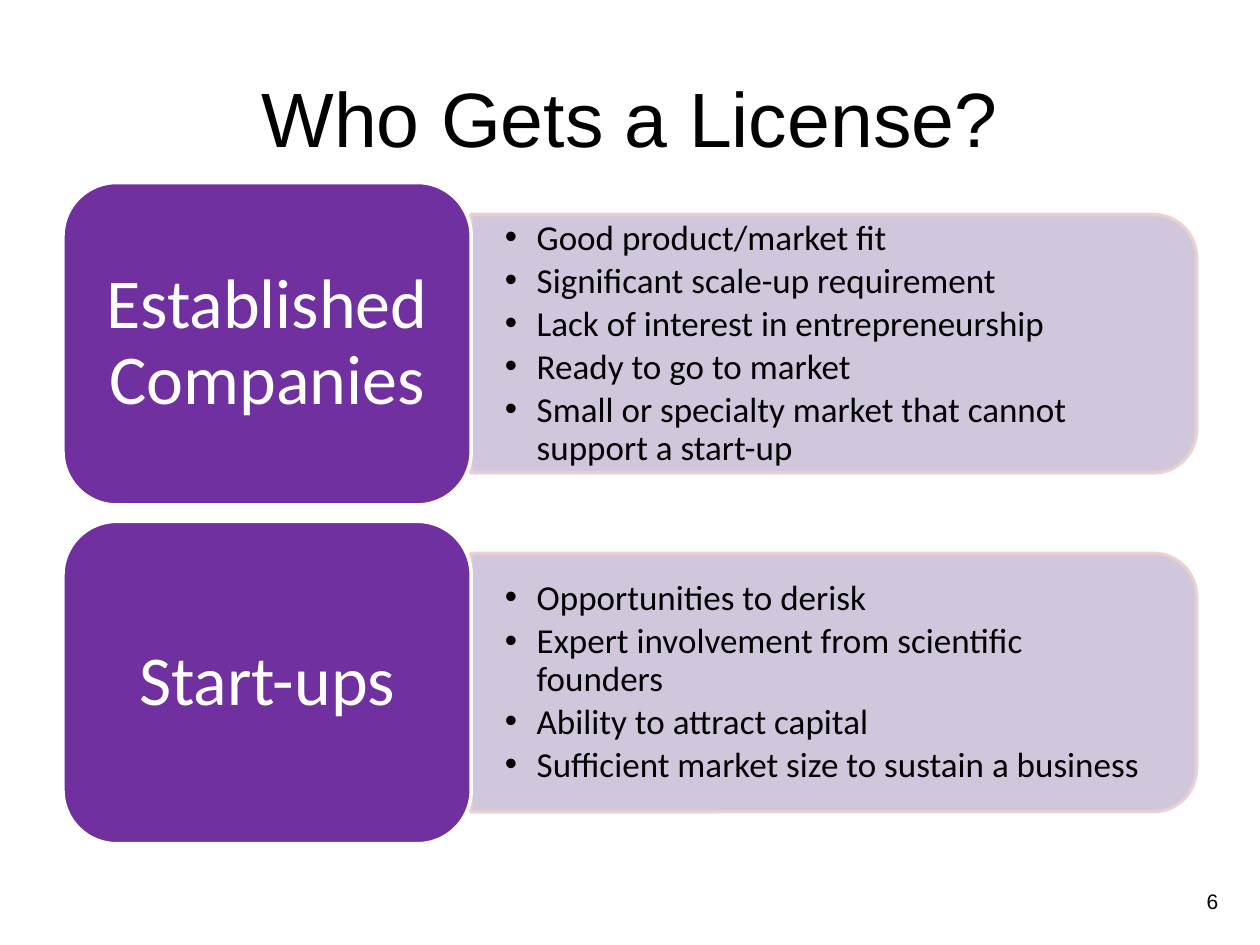
from lxml import etree
from pptx import Presentation
from pptx.dml.color import RGBColor
from pptx.enum.shapes import MSO_SHAPE
from pptx.enum.text import MSO_ANCHOR, PP_ALIGN
from pptx.oxml.ns import qn
from pptx.util import Cm, Pt

ROUNDED = MSO_SHAPE.ROUNDED_RECTANGLE
ROUNDED_TOP = MSO_SHAPE.ROUND_2_SAME_RECTANGLE
MIDDLE = MSO_ANCHOR.MIDDLE
LEFT, CENTER, RIGHT = PP_ALIGN.LEFT, PP_ALIGN.CENTER, PP_ALIGN.RIGHT

TAG_LEFT, TAG_WIDTH, TAG_HEIGHT = 1.27, 8.23, 6.5
FIRST_TOP, ROW_PITCH = 3.68, 6.83
PANEL_LEFT, PANEL_WIDTH, PANEL_HEIGHT = 9.49, 14.63, 5.21
LIST_WIDTH, LIST_HEIGHT = 14.38, 4.7

GROUPS = [
    ("Established Companies", [
        "Good product/market fit",
        "Significant scale-up requirement",
        "Lack of interest in entrepreneurship",
        "Ready to go to market",
        "Small or specialty market that cannot support a start-up",
    ]),
    ("Start-ups", [
        "Opportunities to derisk",
        "Expert involvement from scientific founders",
        "Ability to attract capital",
        "Sufficient market size to sustain a business",
    ]),
]


def rgb(color):
    return RGBColor.from_string(color)


def add_bullet(para):
    properties = para._p.get_or_add_pPr()
    properties.set("marL", str(Cm(0.64)))
    properties.set("indent", str(-Cm(0.64)))
    etree.SubElement(properties, qn("a:buFont")).set("typeface", "Arial")
    etree.SubElement(properties, qn("a:buChar")).set("char", "•")


def write_text(box, text, size=20, font="Calibri", color="000000", align=LEFT,
               spacing=1.0, after=0, bullets=False, insets=(0.25, 0.13)):
    frame = box.text_frame
    frame.word_wrap = True
    frame.vertical_anchor = MIDDLE
    frame.margin_left = frame.margin_right = Cm(insets[0])
    frame.margin_top = frame.margin_bottom = Cm(insets[1])
    frame.text = text
    for para in frame.paragraphs:
        if bullets:
            para.level = 1
            add_bullet(para)
        para.alignment = align
        para.line_spacing = spacing
        para.space_before = Pt(0)
        para.space_after = Pt(after)
        for span in para.runs:
            span.font.name = font
            span.font.size = Pt(size)
            span.font.color.rgb = rgb(color)


def add_box(slide, kind, left, top, width, height, fill, line, opacity=100):
    box = slide.shapes.add_shape(kind, Cm(left), Cm(top), Cm(width), Cm(height))
    box.shadow.inherit = False
    box.fill.solid()
    box.fill.fore_color.rgb = rgb(fill)
    box.line.color.rgb = rgb(line)
    box.line.width = Pt(2)
    if opacity < 100:
        for color in box._element.spPr.iter(qn("a:srgbClr")):
            etree.SubElement(color, qn("a:alpha")).set("val", str(opacity * 1000))
    return box


def add_textbox(slide, left, top, width, height, text, **text_format):
    box = slide.shapes.add_textbox(Cm(left), Cm(top), Cm(width), Cm(height))
    write_text(box, text, **text_format)


def add_title(slide, text):
    title = slide.shapes.title
    title.left, title.top = Cm(1.27), Cm(0.76)
    title.width, title.height = Cm(22.86), Cm(3.18)
    write_text(title, text, size=44, font="Arial", align=CENTER)


def add_panel(slide, middle, points):
    panel = add_box(slide, ROUNDED_TOP,
                    PANEL_LEFT + (PANEL_WIDTH - PANEL_HEIGHT) / 2,
                    middle - PANEL_WIDTH / 2, PANEL_HEIGHT, PANEL_WIDTH,
                    "CCC1DA", "E8D0D0", opacity=90)
    panel.rotation = 90
    add_textbox(slide, PANEL_LEFT, middle - LIST_HEIGHT / 2, LIST_WIDTH,
                LIST_HEIGHT, "\n".join(points), spacing=0.9, after=3,
                bullets=True, insets=(0.69, 0.36))


def add_tag(slide, top, text):
    tag = add_box(slide, ROUNDED, TAG_LEFT, top, TAG_WIDTH, TAG_HEIGHT,
                  "7030A0", "FFFFFF")
    write_text(tag, text, size=40, color="FFFFFF", align=CENTER, spacing=0.9,
               insets=(0.43, 0.2))


def main():
    deck = Presentation()
    deck.slide_width, deck.slide_height = Cm(25.4), Cm(19.05)
    slide = deck.slides.add_slide(deck.slide_layouts[5])
    add_title(slide, "Who Gets a License?")
    add_textbox(slide, 23.16, 17.65, 1.65, 1.02, "6", size=12, font="Arial",
                align=RIGHT)
    for row, (name, points) in enumerate(GROUPS):
        top = FIRST_TOP + row * ROW_PITCH
        add_panel(slide, top + TAG_HEIGHT / 2, points)
        add_tag(slide, top, name)
    deck.save("out.pptx")


if __name__ == "__main__":
    main()
